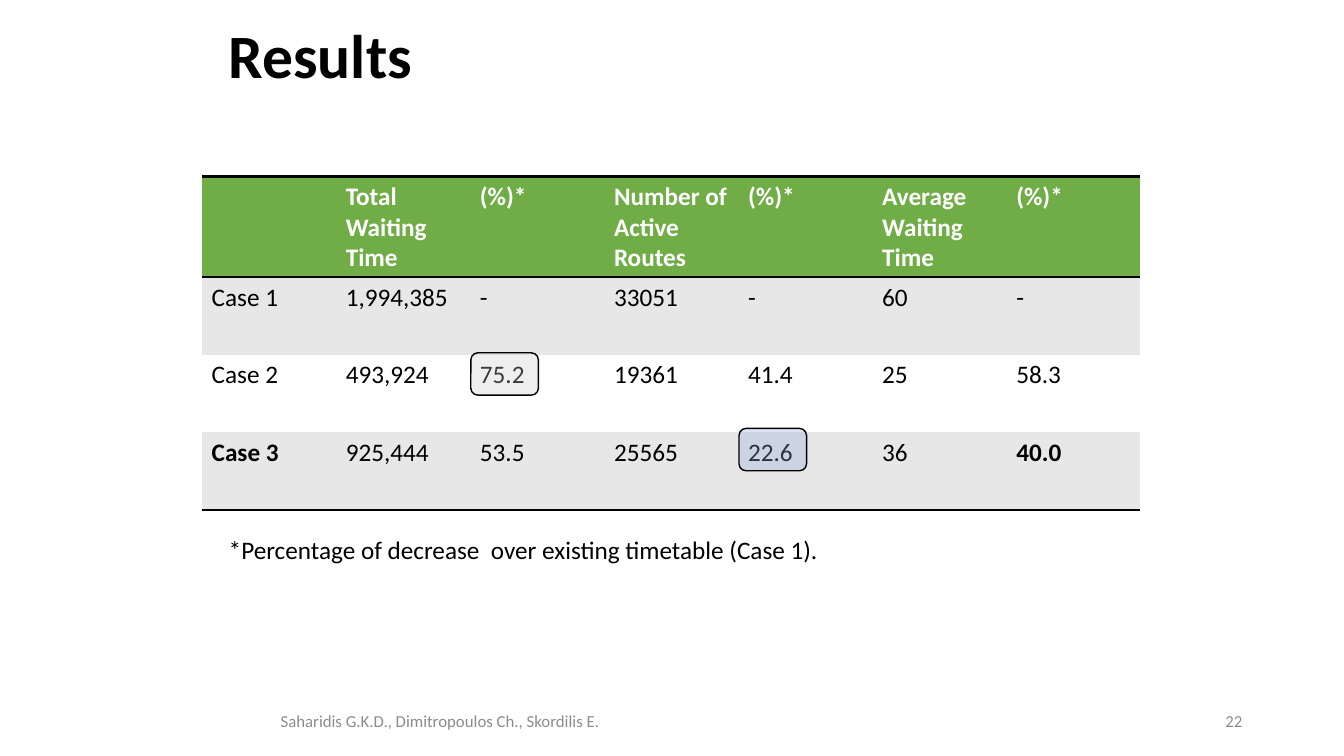
from dataclasses import dataclass

import pptx
import pptx.dml.color
import pptx.enum.shapes
import pptx.enum.text
import pptx.oxml
import pptx.oxml.ns
import pptx.util

Inches = pptx.util.Inches
Pt = pptx.util.Pt
ALIGN = pptx.enum.text.PP_ALIGN
ANCHOR = pptx.enum.text.MSO_ANCHOR


@dataclass(frozen=True)
class Theme:
    font: str = "Calibri"
    title_size: int = 44
    body_size: int = 18
    footer_size: int = 12
    ink: str = "000000"
    white: str = "FFFFFF"
    muted: str = "8C8C8C"
    header: str = "70AD47"
    band: str = "E7E7E7"
    grey_mark: str = "C9C9C9"
    blue_mark: str = "8FAADC"


@dataclass(frozen=True)
class Label:
    text: str
    box: tuple[float, float, float, float]
    size: int
    color: str
    bold: bool = False
    align: ALIGN = ALIGN.LEFT
    anchor: ANCHOR = ANCHOR.MIDDLE
    wrap: bool = True
    spacing: float = 1.0


@dataclass(frozen=True)
class Highlight:
    left: float
    top: float
    color: str


THEME = Theme()

LABELS = [
    Label("Results", (2.17, 0, 9, 1.17), THEME.title_size, THEME.ink,
          bold=True, spacing=0.9),
    Label("Saharidis G.K.D., Dimitropoulos Ch., Skordilis E.",
          (2.39, 6.95, 3.95, 0.4), THEME.footer_size, THEME.muted,
          align=ALIGN.CENTER),
    Label("22", (9.42, 6.95, 3, 0.4), THEME.footer_size, THEME.muted,
          align=ALIGN.RIGHT),
    Label("*Percentage of decrease  over existing timetable (Case 1).",
          (2.17, 5.25, 6.12, 0.4), THEME.body_size, THEME.ink,
          anchor=ANCHOR.TOP, wrap=False),
]

RESULTS = [
    ["", "Total Waiting Time", "(%)*", "Number of Active Routes", "(%)*",
     "Average Waiting Time", "(%)*"],
    ["Case 1", "1,994,385", "-", "33051", "-", "60", "-"],
    ["Case 2", "493,924", "75.2", "19361", "41.4", "25", "58.3"],
    ["Case 3", "925,444", "53.5", "25565", "22.6", "36", "40.0"],
]
ROW_FILLS = [THEME.header, THEME.band, THEME.white, THEME.band]
BOLD_RESULTS = {"Case 3", "40.0"}
HEADER_HEIGHT, ROW_HEIGHT, COLUMN_WIDTH = 0.93, 0.77, 1.33
PLAIN_TABLE_STYLE = "{2D5ABB26-0587-4C30-8999-92F81FD0307C}"

HIGHLIGHTS = [
    Highlight(4.67, 3.5, THEME.grey_mark),
    Highlight(7.33, 4.25, THEME.blue_mark),
]


def rgb(color: str) -> pptx.dml.color.RGBColor:
    return pptx.dml.color.RGBColor.from_string(color)


def style_font(p, size: int, color: str, bold: bool) -> None:
    p.font.name = THEME.font
    p.font.size = Pt(size)
    p.font.bold = bold
    p.font.color.rgb = rgb(color)


def add_label(s, label: Label) -> None:
    tf = s.shapes.add_textbox(*map(Inches, label.box)).text_frame
    tf.word_wrap = label.wrap
    tf.vertical_anchor = label.anchor
    p = tf.paragraphs[0]
    p.text = label.text
    p.alignment = label.align
    p.line_spacing = label.spacing
    style_font(p, label.size, label.color, label.bold)


def add_border(cell, side: str) -> None:
    """Rule one side of a cell; called before the cell is filled."""
    ns = pptx.oxml.ns.nsdecls("a")
    cell._tc.get_or_add_tcPr().append(pptx.oxml.parse_xml(
        f'<a:{side} {ns} w="{Pt(2)}"><a:solidFill>'
        f'<a:srgbClr val="{THEME.ink}"/></a:solidFill></a:{side}>'))


def add_results(s) -> None:
    rows, cols = len(RESULTS), len(RESULTS[0])
    frame = s.shapes.add_table(
        rows, cols, Inches(2), Inches(1.75), Inches(COLUMN_WIDTH * cols),
        Inches(HEADER_HEIGHT + ROW_HEIGHT * (rows - 1)))
    table = frame.table
    table._tbl.tblPr.find(pptx.oxml.ns.qn("a:tableStyleId")).text = PLAIN_TABLE_STYLE
    for column in table.columns:
        column.width = Inches(COLUMN_WIDTH)
    for i, values in enumerate(RESULTS):
        is_header = i == 0
        table.rows[i].height = Inches(HEADER_HEIGHT if is_header else ROW_HEIGHT)
        for j, value in enumerate(values):
            cell = table.cell(i, j)
            if is_header:
                add_border(cell, "lnT")
            if is_header or i == rows - 1:
                add_border(cell, "lnB")
            cell.fill.solid()
            cell.fill.fore_color.rgb = rgb(ROW_FILLS[i])
            cell.text = value
            style_font(cell.text_frame.paragraphs[0], THEME.body_size,
                       THEME.white if is_header else THEME.ink,
                       is_header or value in BOLD_RESULTS)


def add_highlight(s, mark: Highlight) -> None:
    sp = s.shapes.add_shape(
        pptx.enum.shapes.MSO_SHAPE.ROUNDED_RECTANGLE,
        Inches(mark.left), Inches(mark.top), Inches(0.67), Inches(0.42))
    sp.shadow.inherit = False
    sp.fill.solid()
    sp.fill.fore_color.rgb = rgb(mark.color)
    sp.line.color.rgb = rgb(THEME.ink)
    sp.line.width = Pt(1)
    # Let the figure underneath show through
    fill = sp._element.spPr.find(pptx.oxml.ns.qn("a:solidFill"))
    fill[0].append(pptx.oxml.parse_xml(
        f'<a:alpha {pptx.oxml.ns.nsdecls("a")} val="30000"/>'))


def main() -> None:
    prs = pptx.Presentation()
    prs.slide_width, prs.slide_height = Inches(13.33), Inches(7.5)
    s = prs.slides.add_slide(prs.slide_layouts[6])

    # Title, footer, page number and footnote
    for label in LABELS:
        add_label(s, label)

    # Results table with its highlighted figures
    add_results(s)
    for mark in HIGHLIGHTS:
        add_highlight(s, mark)

    prs.save("out.pptx")


if __name__ == "__main__":
    main()
